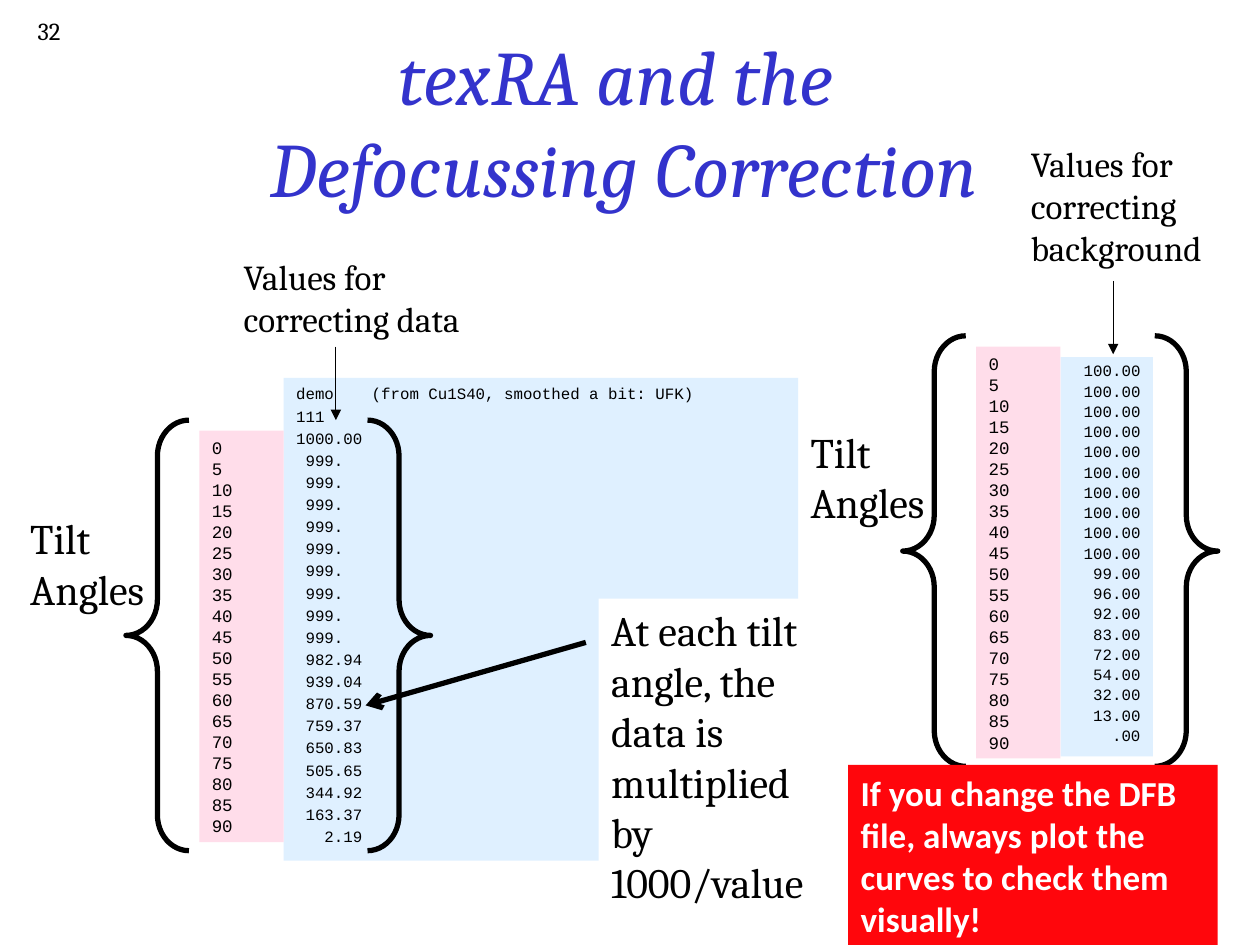
from dataclasses import dataclass

from lxml.etree import SubElement
from pptx import Presentation
from pptx.dml.color import RGBColor
from pptx.enum.shapes import MSO_CONNECTOR, MSO_SHAPE
from pptx.enum.text import MSO_ANCHOR, PP_ALIGN
from pptx.oxml.ns import qn
from pptx.util import Cm, Pt

BLACK, WHITE, TITLE_BLUE = "000000", "FFFFFF", "3333CC"
DATA_BLUE, TILT_PINK, WARNING_RED = "DFF0FF", "FFDDEA", "FF060C"
SERIF, SANS, MONO = "Cambria", "Calibri", "Courier New"
MONO_SIZE = 9
CHARACTER_WIDTH = 0.6 * MONO_SIZE
LINE_GAP = 0.2 * MONO_SIZE
BRACE_WIDTH, BRACE_HEIGHT = 1.27, 8.68

TILT_ANGLES = "\n".join(str(angle) for angle in range(0, 91, 5))
DATA_VALUES = ["1000.00"] + ["999."] * 9 + [
    "982.94", "939.04", "870.59", "759.37", "650.83",
    "505.65", "344.92", "163.37", "2.19"]
BACKGROUND_VALUES = ["100.00"] * 10 + [
    "99.00", "96.00", "92.00", "83.00", "72.00", "54.00", "32.00", "13.00", ".00"]


@dataclass
class TextBox:
    """A text area; lengths in centimetres, size in points."""
    text: str
    left: float
    top: float
    width: float
    height: float
    size: float = 24
    font: str = SERIF
    color: str = BLACK
    fill: str | None = None
    align: PP_ALIGN = PP_ALIGN.LEFT
    anchor: MSO_ANCHOR = MSO_ANCHOR.TOP
    bold: bool = False
    italic: bool = False
    space_before: float = 0
    line_spacing: float = 1.0


@dataclass
class Brace:
    left: float
    top: float
    opening: bool


@dataclass
class Arrow:
    start: tuple[float, float]
    end: tuple[float, float]
    width: float = 0.75
    head: str = "triangle"


def rgb(color: str) -> RGBColor:
    return RGBColor.from_string(color)


def draw_text(page, item: TextBox):
    box = page.shapes.add_textbox(
        Cm(item.left), Cm(item.top), Cm(item.width), Cm(item.height))
    if item.fill:
        box.fill.solid()
        box.fill.fore_color.rgb = rgb(item.fill)
    frame = box.text_frame
    frame.word_wrap = True
    frame.vertical_anchor = item.anchor
    frame.text = item.text
    for para in frame.paragraphs:
        para.alignment = item.align
        para.line_spacing = item.line_spacing
        para.space_before = Pt(item.space_before)
        for span in para.runs:
            span.font.name = item.font
            span.font.size = Pt(item.size)
            span.font.bold = item.bold
            span.font.italic = item.italic
            span.font.color.rgb = rgb(item.color)
    return box


def align_data_file(box) -> None:
    """Set the header's tab stop and line the values up on the decimal point."""
    header, _, *values = box.text_frame.paragraphs
    tabs = SubElement(header._p.get_or_add_pPr(), qn("a:tabLst"))
    SubElement(tabs, qn("a:tab"), pos=str(Pt(8 * CHARACTER_WIDTH)), algn="l")
    for para in values:
        missing_digits = 4 - para.text.index(".")
        para._p.get_or_add_pPr().set("marL", str(Pt(missing_digits * CHARACTER_WIDTH)))


def draw_brace(page, item: Brace) -> None:
    brace = page.shapes.add_shape(
        MSO_SHAPE.RIGHT_BRACE, Cm(item.left), Cm(item.top),
        Cm(BRACE_WIDTH), Cm(BRACE_HEIGHT))
    brace.shadow.inherit = False
    brace.adjustments[0] = 0.57
    brace.adjustments[1] = 0.5
    brace.fill.background()
    brace.line.color.rgb = rgb(BLACK)
    brace.line.width = Pt(3)
    if item.opening:
        brace._element.spPr.find(qn("a:xfrm")).set("flipH", "1")


def draw_arrow(page, item: Arrow) -> None:
    arrow = page.shapes.add_connector(
        MSO_CONNECTOR.STRAIGHT, *(Cm(value) for value in item.start + item.end))
    arrow.line.color.rgb = rgb(BLACK)
    arrow.line.width = Pt(item.width)
    SubElement(arrow.line._get_or_add_ln(), qn("a:tailEnd"), type=item.head)
    SubElement(arrow._element.spPr, qn("a:effectLst"))


def main() -> None:
    deck = Presentation()
    deck.slide_width, deck.slide_height = Cm(25.4), Cm(19.05)
    page = deck.slides.add_slide(deck.slide_layouts[6])

    draw_text(page, TextBox("32", 0.2, 0.2, 1.27, 0.64, size=14, align=PP_ALIGN.RIGHT))
    draw_text(page, TextBox(
        "texRA and the \vDefocussing Correction", 1.9, 0.64, 21.38, 3.6, size=44,
        color=TITLE_BLUE, italic=True, align=PP_ALIGN.CENTER, anchor=MSO_ANCHOR.MIDDLE))

    data_lines = ["demo\t(from Cu1S40, smoothed a bit: UFK)", "111", *DATA_VALUES]
    data_box = draw_text(page, TextBox(
        "\n".join(data_lines), 5.72, 7.62, 10.37, 9.73, size=MONO_SIZE, font=MONO,
        fill=DATA_BLUE, space_before=LINE_GAP))
    align_data_file(data_box)
    draw_text(page, TextBox(
        "\n".join(BACKGROUND_VALUES), 21.38, 7.2, 1.86, 8.05, size=MONO_SIZE, font=MONO,
        fill=DATA_BLUE, align=PP_ALIGN.RIGHT, space_before=LINE_GAP, line_spacing=0.9))
    for left, top in ((4.02, 8.68), (19.68, 6.99)):
        draw_text(page, TextBox(
            TILT_ANGLES, left, top, 1.7, 8.3, size=10, font=MONO, fill=TILT_PINK))

    for brace in (Brace(7.41, 8.47, False), Brace(2.54, 8.47, True),
                  Brace(23.28, 6.77, False), Brace(18.2, 6.77, True)):
        draw_brace(page, brace)

    for left, top in ((0.36, 10.21), (16.09, 8.47)):
        draw_text(page, TextBox("Tilt\vAngles", left, top, 3.12, 2.31))
    draw_arrow(page, Arrow((11.81, 12.95), (7.37, 14.22), width=3, head="arrow"))
    draw_text(page, TextBox(
        "At each tilt angle, the data is multiplied by 1000/value",
        12.07, 12.07, 4.66, 6.4, fill=WHITE))

    draw_text(page, TextBox(
        "Values for correcting background", 20.53, 2.75, 4.45, 2.82, size=20))
    draw_text(page, TextBox(
        "Values for correcting data", 4.66, 5.03, 6.35, 1.96, size=20))
    draw_arrow(page, Arrow((6.77, 6.99), (6.77, 8.47)))
    draw_arrow(page, Arrow((22.44, 5.66), (22.44, 7.14)))

    draw_text(page, TextBox(
        "If you change the DFB file, always plot the curves to check them visually!",
        17.1, 15.42, 7.45, 3.63, size=20, font=SANS, color=WHITE,
        fill=WARNING_RED, bold=True))
    deck.save("out.pptx")


if __name__ == "__main__":
    main()
